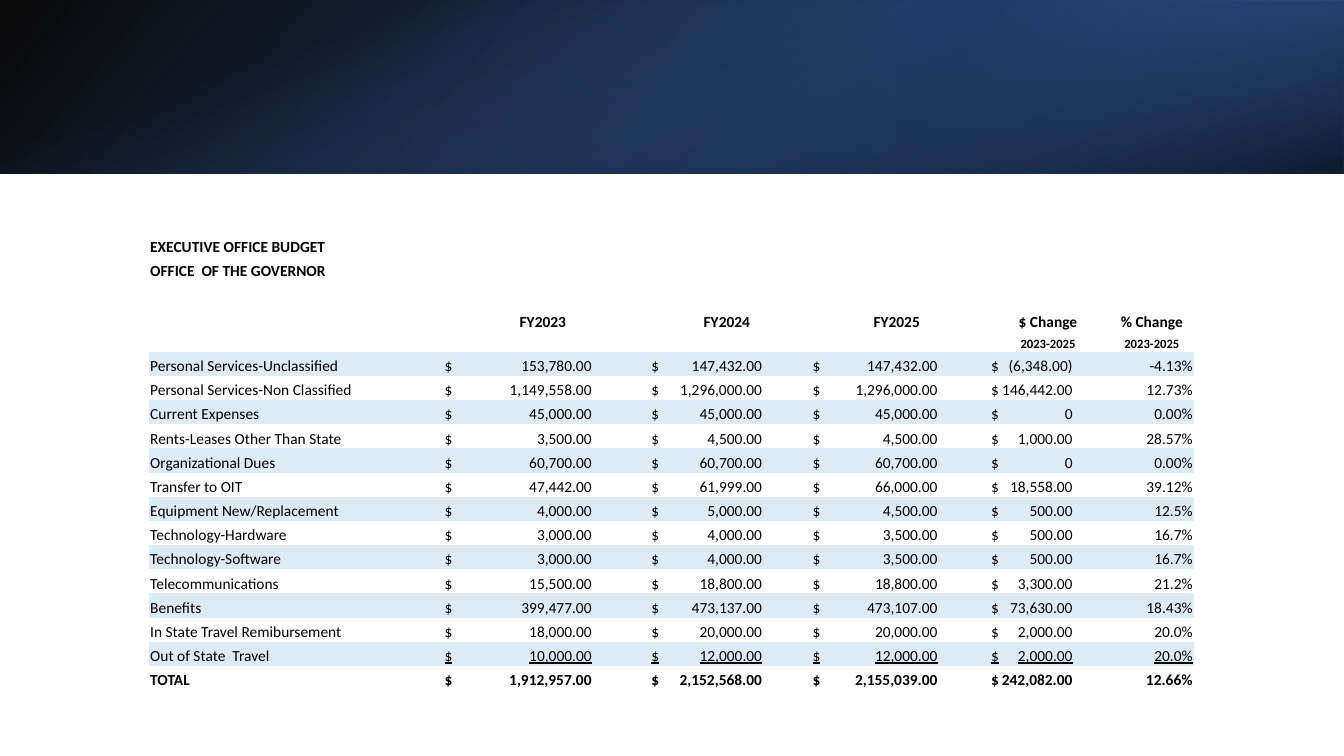
from dataclasses import dataclass

from pptx import Presentation
from pptx import util as u
from pptx.dml.color import RGBColor
from pptx.enum import shapes, text
from pptx.oxml import parse_xml
from pptx.oxml.ns import nsdecls

Inches = u.Inches


@dataclass(frozen=True)
class Theme:
    font: str = "Calibri"
    ink: str = "000000"
    band: str = "DDEBF7"
    navy: str = "203864"
    deep: str = "2F5597"
    blue: str = "4472C4"
    body: int = 11
    small: int = 9


T = Theme()
LEFT, MID, RIGHT = text.PP_ALIGN.LEFT, text.PP_ALIGN.CENTER, text.PP_ALIGN.RIGHT
PLAIN = "{2D5ABB26-0587-4C30-8999-92F81FD0307C}"  # no style, no grid

COLS = [2.88, 2.05, 1.6, 1.77, 1.23, 0.83]
STOPS = [1.46, 1.1, 1.24, 0.81]  # right edge of the figures in each money column
ROW, GAP, SUB = 0.24, 0.26, 0.2

HEADS = ["FY2023", "FY2024", "FY2025", "$ Change", "% Change"]
SPAN = "2023-2025"
COSTS = [
    ("Personal Services-Unclassified", "153,780.00", "147,432.00", "147,432.00", "(6,348.00)", "-4.13%"),
    ("Personal Services-Non Classified", "1,149,558.00", "1,296,000.00", "1,296,000.00", "146,442.00", "12.73%"),
    ("Current Expenses", "45,000.00", "45,000.00", "45,000.00", "0", "0.00%"),
    ("Rents-Leases Other Than State", "3,500.00", "4,500.00", "4,500.00", "1,000.00", "28.57%"),
    ("Organizational Dues", "60,700.00", "60,700.00", "60,700.00", "0", "0.00%"),
    ("Transfer to OIT", "47,442.00", "61,999.00", "66,000.00", "18,558.00", "39.12%"),
    ("Equipment New/Replacement", "4,000.00", "5,000.00", "4,500.00", "500.00", "12.5%"),
    ("Technology-Hardware", "3,000.00", "4,000.00", "3,500.00", "500.00", "16.7%"),
    ("Technology-Software", "3,000.00", "4,000.00", "3,500.00", "500.00", "16.7%"),
    ("Telecommunications", "15,500.00", "18,800.00", "18,800.00", "3,300.00", "21.2%"),
    ("Benefits", "399,477.00", "473,137.00", "473,107.00", "73,630.00", "18.43%"),
    ("In State Travel Remibursement", "18,000.00", "20,000.00", "20,000.00", "2,000.00", "20.0%"),
    ("Out of State  Travel", "10,000.00", "12,000.00", "12,000.00", "2,000.00", "20.0%"),
    ("TOTAL", "1,912,957.00", "2,152,568.00", "2,155,039.00", "242,082.00", "12.66%"),
]


def write(cell, words, size=T.body, bold=False, line=False, align=LEFT, stop=None):
    """Put one formatted line of text in a cell."""
    para = cell.text_frame.paragraphs[0]
    para.alignment = align
    if stop:
        cell.margin_left = Inches(0.05)
        para._p.get_or_add_pPr().append(parse_xml(
            f'<a:tabLst {nsdecls("a")}><a:tab pos="{Inches(stop)}" algn="r"/></a:tabLst>'))
    run = para.add_run()
    run.text = words
    font = run.font
    font.name, font.size, font.bold = T.font, u.Pt(size), bold
    font.underline = line
    font.color.rgb = RGBColor.from_string(T.ink)


def shade(slide, box, stops, angle, turn=0, flip=False):
    """Add a rectangle with a see-through gradient; stops are (place, colour, opacity)."""
    rect = slide.shapes.add_shape(shapes.MSO_SHAPE.RECTANGLE, *map(Inches, box))
    rect.shadow.inherit = False
    rect.rotation = turn
    rect.line.fill.background()
    rect.fill.background()
    props = rect._element.spPr
    if flip:
        props.xfrm.set("flipH", "1")
    marks = "".join(
        f'<a:gs pos="{at * 1000}"><a:srgbClr val="{hue}"><a:alpha val="{seen * 1000}"/>'
        f'</a:srgbClr></a:gs>' for at, hue, seen in stops)
    blend = parse_xml(
        f'<a:gradFill {nsdecls("a")} rotWithShape="1"><a:gsLst>{marks}</a:gsLst>'
        f'<a:lin ang="{angle * 60000}" scaled="0"/></a:gradFill>')
    blank = props.find("{*}noFill")
    props.replace(blank, blend)


def banner(slide):
    shade(slide, (0, 0, 13.33, 1.72), [(0, T.ink, 96), (100, T.deep, 100)], 140, flip=True)
    shade(slide, (8.89, 0, 4.44, 1.72), [(19, T.navy, 68), (100, T.blue, 79)], 320,
          turn=180, flip=True)
    shade(slide, (5.8, -5.8, 1.72, 13.33), [(23, T.blue, 0), (99, T.ink, 74)], 340, turn=90)


def grid(slide, highs):
    """Add an unstyled table with tight bottom-aligned cells."""
    frame = slide.shapes.add_table(len(highs), len(COLS), Inches(1.48), Inches(2.31),
                                   Inches(sum(COLS)), Inches(sum(highs)))
    table = frame.table
    table.first_row = table.horz_banding = False
    table._tbl.tblPr.find("{*}tableStyleId").text = PLAIN
    for col, wide in zip(table.columns, COLS):
        col.width = Inches(wide)
    for row, high in zip(table.rows, highs):
        row.height = Inches(high)
    for cell in table.iter_cells():
        cell.margin_left = cell.margin_right = cell.margin_top = Inches(0.01)
        cell.margin_bottom = 0
        cell.vertical_anchor = text.MSO_ANCHOR.BOTTOM
        cell.fill.background()
        # Keep empty cells from stretching their row
        cell.text_frame.paragraphs[0]._p.append(
            parse_xml(f'<a:endParaRPr {nsdecls("a")} sz="{T.small * 100}"/>'))
    return table


def budget(slide):
    table = grid(slide, [ROW, ROW, GAP, ROW, SUB] + [ROW] * len(COSTS))

    # Headings
    write(table.cell(0, 0), "EXECUTIVE OFFICE BUDGET", bold=True)
    write(table.cell(1, 0), "OFFICE  OF THE GOVERNOR", bold=True)
    for col, head in enumerate(HEADS, 1):
        write(table.cell(3, col), head, bold=True, align=MID)
    for col in (4, 5):
        write(table.cell(4, col), SPAN, size=T.small, bold=True, align=MID)

    # Cost lines, with the last one ruled off above the total
    last = len(COSTS) - 1
    for row, (name, *sums, rate) in enumerate(COSTS):
        cells = table.rows[row + 5].cells
        bold, line = row == last, row == last - 1
        write(cells[0], name, bold=bold)
        for col, (amount, stop) in enumerate(zip(sums, STOPS), 1):
            write(cells[col], f"$\t{amount}", bold=bold, line=line, stop=stop)
        write(cells[5], rate, bold=bold, line=line, align=RIGHT)
        if row % 2 == 0:
            for cell in cells:
                cell.fill.solid()
                cell.fill.fore_color.rgb = RGBColor.from_string(T.band)


def main():
    deck = Presentation()
    deck.slide_width, deck.slide_height = Inches(13.33), Inches(7.5)
    slide = deck.slides.add_slide(deck.slide_layouts[6])
    banner(slide)
    budget(slide)
    deck.save("out.pptx")


if __name__ == "__main__":
    main()
